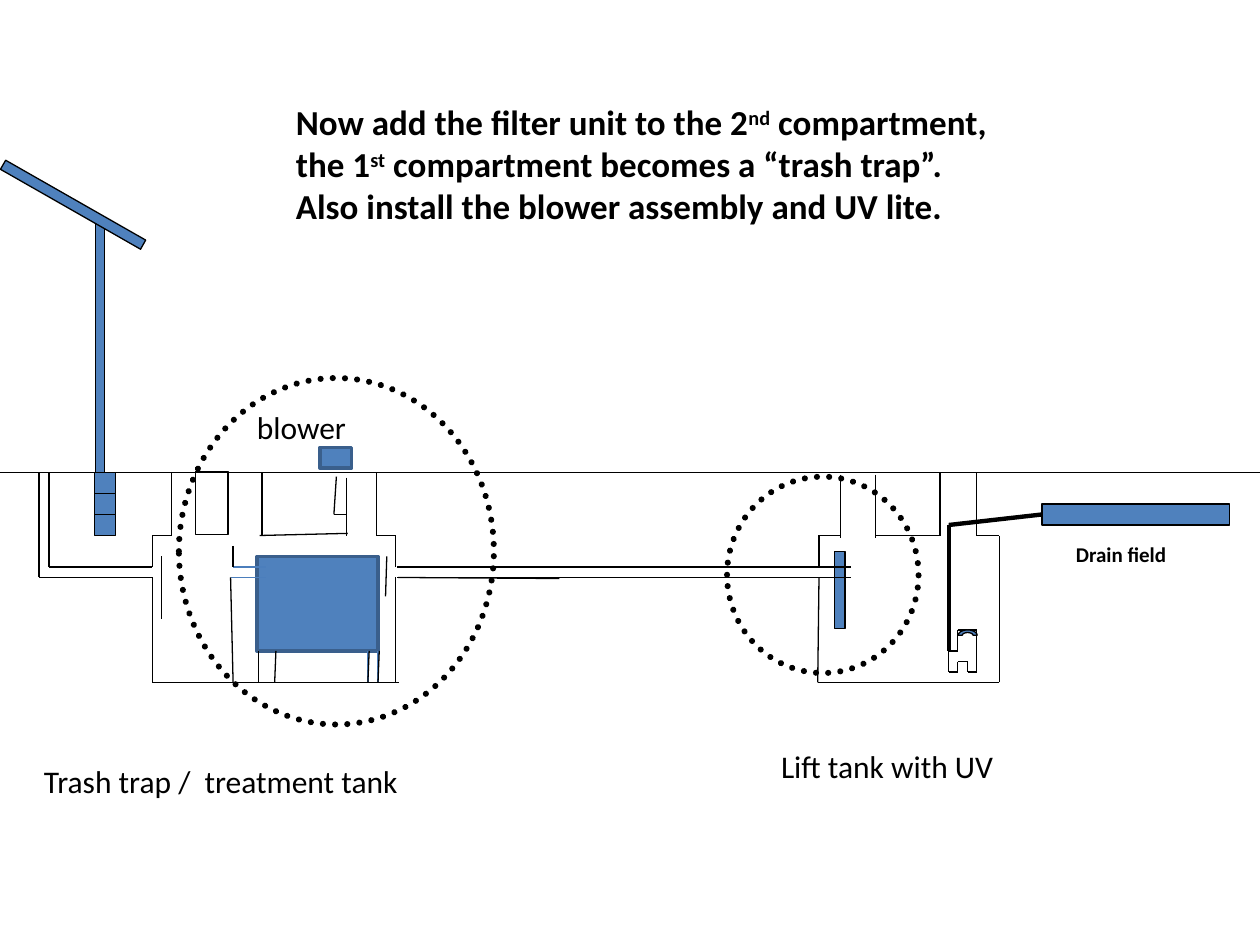
"""Build a slide showing a treatment tank and a lift tank in cross-section."""
import math

from lxml import etree
from pptx import Presentation
from pptx import util as u
from pptx.dml.color import RGBColor
from pptx.enum import dml, shapes, text
from pptx.oxml.ns import qn

COLORS = {"ink": "000000", "blue": "4F81BD", "edge": "3A5F8C", "pipe": "4B7EBC"}

deck = Presentation()
deck.slide_width, deck.slide_height = u.Inches(10), u.Inches(7.5)
slide = deck.slides.add_slide(deck.slide_layouts[6])
col, row = deck.slide_width / 100, deck.slide_height / 90


def spot(*lengths):
    return [round(n * (row if i % 2 else col)) for i, n in enumerate(lengths)]


def style(part, fill, line, weight):
    part.shadow.inherit = False
    if fill:
        part.fill.solid()
        part.fill.fore_color.rgb = RGBColor.from_string(COLORS[fill])
    else:
        part.fill.background()
    part.line.color.rgb = RGBColor.from_string(COLORS[line])
    part.line.width = u.Pt(weight)


solids = [
    (15.5, 44.9, 2.6, 6, 0, None, "ink", 0.75),
    (7.5, 45, 1.7, 2, 0, "blue", "ink", 0.75),
    (7.5, 47, 1.7, 2, 0, "blue", "ink", 0.75),
    (7.5, 49, 1.7, 2, 0, "blue", "ink", 0.75),
    (82.7, 48, 14.9, 2, 0, "blue", "ink", 0.75),
    (7.6, 21, 0.7, 24, 0, "blue", "ink", 0.75),
    (-0.6, 19, 12.8, 1, 29.7, "blue", "ink", 0.75),
    (20.4, 53, 9.6, 9, 0, "blue", "edge", 2),
    (25.4, 42.6, 2.5, 2, 0, "blue", "edge", 2),
    (63.6, 55.7, 6.1, 1, 90, "blue", "ink", 0.75),
]
blue_pipes = [
    [(21.1, 55), (18.3, 55)],
    [(18.5, 54), (21.1, 54)],
    [(29.2, 65), (29.2, 62)],
    [(30, 65), (30, 62)],
]
ground = [[(0, 45), (100, 45)]]
treatment_tank = [
    [(3.9, 45), (3.9, 54), (12.1, 54), (12.1, 51), (13.6, 51), (13.6, 45)],
    [(3.1, 45), (3.1, 55), (12.1, 55), (12.1, 65), (31.7, 65)],
    [(31.4, 54), (31.4, 51), (29.9, 51), (29.9, 45)],
    [(31.4, 55), (31.4, 65)],
    [(12.8, 53), (12.8, 59)],
    [(30.7, 53), (30.6, 56.8)],
    [(18.3, 55), (18.5, 65)],
    [(18.5, 52), (18.5, 54)],
    [(27.6, 50.8), (20.6, 51)],
    [(20.8, 51), (20.8, 45)],
]
unit_legs = [
    [(21.9, 62), (21.8, 65)],
    [(20.5, 62), (20.5, 65)],
    [(29.3, 62), (29.2, 65)],
    [(30.1, 62), (30, 65)],
]
air_line = [
    [(27.5, 45.5), (27.5, 51)],
    [(26.7, 45.4), (26.5, 49), (27.5, 49)],
]
transfer_pipe = [
    [(31.6, 54), (40.8, 54)],
    [(40, 54), (65, 54)],
    [(65, 55), (40.8, 55), (31.5, 55)],
    [(31.6, 55), (44.4, 55.1)],
    [(31.5, 54), (44.4, 54)],
    [(67.5, 54), (62.5, 54)],
    [(67.5, 55), (62.5, 55)],
]
lift_tank = [
    [(65, 55), (64.9, 65), (79.3, 65), (79.3, 51), (77.5, 51), (77.5, 45)],
    [(74.6, 45), (74.6, 51), (69.5, 51)],
    [(69.5, 45.2), (69.5, 51.2)],
    [(66.7, 45.2), (66.7, 51.2)],
    [(66.7, 51), (64.9, 51)],
    [(65, 51), (65, 54)],
]
pump = [[(76.8, 60), (77.5, 60), (77.5, 64), (76.8, 64), (76.8, 63), (76, 63),
         (76, 64), (75.3, 64), (75.3, 62), (76, 62), (76, 60), (77.5, 60)]]
discharge = [[(75.3, 62), (75.3, 50), (82.7, 49)]]

for left, top, width, height, turn, fill, line, weight in solids:
    solid = slide.shapes.add_shape(
        shapes.MSO_SHAPE.RECTANGLE, *spot(left, top, width, height))
    solid.rotation = turn
    style(solid, fill, line, weight)

thin_runs = (ground + treatment_tank + unit_legs + air_line
             + transfer_pipe + lift_tank + pump)
for runs, color, weight in ((blue_pipes, "pipe", 0.75), (thin_runs, "ink", 0.75),
                            (discharge, "ink", 2.5)):
    for points in runs:
        for start, end in zip(points, points[1:]):
            edge = slide.shapes.add_connector(
                shapes.MSO_CONNECTOR.STRAIGHT, *spot(*start, *end))
            edge.line.color.rgb = RGBColor.from_string(COLORS[color])
            edge.line.width = u.Pt(weight)
            etree.SubElement(edge._element.spPr, qn("a:effectLst"))

angles = [math.radians(a) for a in range(180, -1, -15)]
dome = [spot(76.8 + rx * math.cos(a), 60.5 - ry * math.sin(a))
        for rx, ry, sweep in ((0.75, 0.5, angles), (0.42, 0.25, angles[::-1]))
        for a in sweep]
outline = slide.shapes.build_freeform(*dome[0])
outline.add_line_segments(dome[1:], close=True)
style(outline.convert_to_shape(), "blue", "ink", 0.75)

for highlight in ((14.2, 36, 25, 33), (57.7, 45.4, 15.2, 18.7)):
    ring = slide.shapes.add_shape(shapes.MSO_SHAPE.OVAL, *spot(*highlight))
    style(ring, None, "ink", 3.5)
    ring.line.dash_style = dml.MSO_LINE.ROUND_DOT
    ring._element.spPr.find(qn("a:ln")).set("cap", "rnd")

title = [
    [("Now add the filter unit to the 2", False), ("nd", True), (" compartment,", False)],
    [("the 1", False), ("st", True), (" compartment becomes a “trash trap”.", False)],
    [("Also install the blower assembly and UV lite.", False)],
]
captions = [
    ((2.5, 72, 36.5, 4.8), 18, False, True, [[("Trash trap /  treatment tank", False)]]),
    ((61, 70.6, 19.1, 4.8), 18, False, False, [[("Lift tank with UV", False)]]),
    ((84.4, 51, 13.2, 3.6), 12, True, True, [[("Drain field", False)]]),
    ((22.5, 9, 69.9, 13.3), 20, True, True, title),
    ((19.4, 38.3, 9.2, 4.8), 18, False, False, [[("blower", False)]]),
]
for place, size, bold, wrap, lines in captions:
    frame = slide.shapes.add_textbox(*spot(*place)).text_frame
    frame.word_wrap = wrap
    frame.auto_size = text.MSO_AUTO_SIZE.SHAPE_TO_FIT_TEXT
    for i, pieces in enumerate(lines):
        paragraph = frame.add_paragraph() if i else frame.paragraphs[0]
        for words, raised in pieces:
            run = paragraph.add_run()
            run.text = words
            run.font.name, run.font.size, run.font.bold = "Calibri", u.Pt(size), bold
            run.font.color.rgb = RGBColor.from_string(COLORS["ink"])
            if raised:
                run._r.get_or_add_rPr().set("baseline", "30000")

deck.save("out.pptx")
